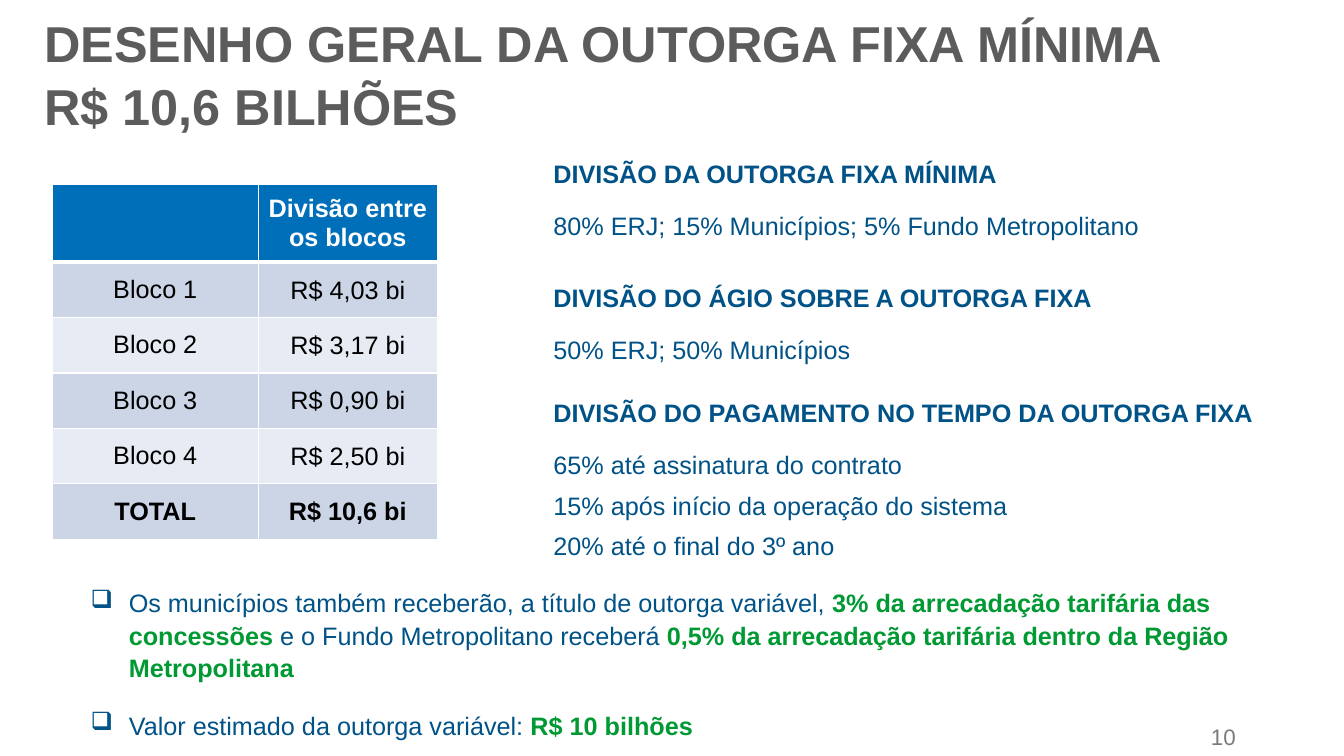
from dataclasses import dataclass

from lxml.etree import SubElement
from pptx import Presentation
from pptx.dml.color import RGBColor
from pptx.enum.text import MSO_ANCHOR as Anchor, PP_ALIGN as Align
from pptx.oxml.ns import qn
from pptx.util import Inches, Pt


@dataclass(frozen=True)
class Theme:
    font: str = "Arial"
    title: str = "5C5C5C"
    number: str = "7B7B7B"
    text: str = "005287"
    accent: str = "009933"
    header: str = "006FB9"
    bands: tuple = ("CCD5E6", "E7EBF3")
    white: str = "FFFFFF"
    black: str = "000000"
    title_size: int = 36
    body_size: int = 18
    number_size: int = 16
    line_spacing: float = 1.07


THEME = Theme()

BLOCKS = [
    ("", "Divisão entre os blocos"),
    ("Bloco 1", "R$ 4,03 bi"),
    ("Bloco 2", "R$ 3,17 bi"),
    ("Bloco 3", "R$ 0,90 bi"),
    ("Bloco 4", "R$ 2,50 bi"),
    ("TOTAL", "R$ 10,6 bi"),
]

DIVISIONS = [
    ((5.39, 1.5, 7.56, 0.95), "DIVISÃO DA OUTORGA FIXA MÍNIMA",
     ["80% ERJ; 15% Municípios; 5% Fundo Metropolitano"]),
    ((5.39, 2.73, 7.56, 0.95), "DIVISÃO DO ÁGIO SOBRE A OUTORGA FIXA",
     ["50% ERJ; 50% Municípios"]),
    ((5.39, 3.87, 7.56, 1.76), "DIVISÃO DO PAGAMENTO NO TEMPO DA OUTORGA FIXA",
     ["65% até assinatura do contrato",
      "15% após início da operação do sistema",
      "20% até o final do 3º ano"]),
]

VARIABLE_GRANT = [
    [("Os municípios também receberão, a título de outorga variável, ", False),
     ("3% da arrecadação tarifária das concessões ", True),
     ("e o Fundo Metropolitano receberá ", False),
     ("0,5% da arrecadação tarifária dentro da Região Metropolitana", True)],
    [("Valor estimado da outorga variável: ", False),
     ("R$ 10 bilhões", True)],
]


def style_font(font, size, color, bold=False):
    font.name = THEME.font
    font.size = Pt(size)
    font.bold = bold
    font.color.rgb = RGBColor.from_string(color)


def add_text_frame(page, box, inset=None):
    frame = page.shapes.add_textbox(*map(Inches, box)).text_frame
    frame.word_wrap = True
    if inset is not None:
        frame.margin_left = frame.margin_right = Inches(inset)
        frame.margin_top = frame.margin_bottom = Inches(inset)
    return frame


def add_title(page, box, lines):
    frame = add_text_frame(page, box, 0.06)
    frame.vertical_anchor = Anchor.MIDDLE
    frame.text = "\n".join(lines)
    for para in frame.paragraphs:
        para.space_after = Pt(2)
        style_font(para.runs[0].font, THEME.title_size, THEME.title, True)


def add_page_number(page, box, number):
    frame = add_text_frame(page, box, 0.05)
    frame.text = number
    style_font(frame.paragraphs[0].runs[0].font, THEME.number_size, THEME.number)


def add_borders(cell, widths):
    properties = cell._tc.get_or_add_tcPr()
    for side, width in widths.items():
        line = SubElement(properties, qn(f"a:ln{side}"), w=str(Pt(width)))
        fill = SubElement(line, qn("a:solidFill"))
        SubElement(fill, qn("a:srgbClr"), val=THEME.white)


def add_block_table(page, box, rows):
    left, top, width, height = box
    header_height = 0.77
    row_height = (height - header_height) / (len(rows) - 1)
    table = page.shapes.add_table(len(rows), 2, *map(Inches, box)).table
    label_width = 2.04
    table.columns[0].width = Inches(label_width)
    table.columns[1].width = Inches(width - label_width)
    for r, values in enumerate(rows):
        is_header = r == 0
        table.rows[r].height = Inches(header_height if is_header else row_height)
        for c, value in enumerate(values):
            cell = table.cell(r, c)
            add_borders(cell, {"L": 1, "R": 1, "T": 3 if r == 1 else 1,
                               "B": 3 if is_header else 1})
            cell.fill.solid()
            color = THEME.header if is_header else THEME.bands[(r - 1) % 2]
            cell.fill.fore_color.rgb = RGBColor.from_string(color)
            cell.vertical_anchor = Anchor.MIDDLE
            if c == 1 and not is_header:
                cell.margin_left = cell.margin_right = cell.margin_top = Inches(0.01)
                cell.margin_bottom = 0
            cell.text = value
            para = cell.text_frame.paragraphs[0]
            para.alignment = Align.CENTER
            font = para.runs[0].font if para.runs else para.font
            style_font(font, THEME.body_size, THEME.white if is_header else THEME.black,
                       is_header or r == len(rows) - 1)


def add_division(page, box, heading, details):
    frame = add_text_frame(page, box)
    frame.text = "\n".join([heading, *details])
    for index, para in enumerate(frame.paragraphs):
        para.line_spacing = THEME.line_spacing
        if index:
            para.space_before = Pt(6)
        else:
            para.space_after = Pt(8)
        style_font(para.runs[0].font, THEME.body_size, THEME.text, index == 0)


def add_bullets(page, box, items):
    frame = add_text_frame(page, box)
    for index, pieces in enumerate(items):
        para = frame.add_paragraph() if index else frame.paragraphs[0]
        para.line_spacing = THEME.line_spacing
        para.space_after = Pt(6)
        if index:
            para.space_before = Pt(12)
        properties = para._p.get_or_add_pPr()
        properties.set("marL", str(Inches(0.38)))
        properties.set("indent", str(-Inches(0.38)))
        SubElement(properties, qn("a:buChar"), char="❑")
        for text, highlighted in pieces:
            span = para.add_run()
            span.text = text
            color = THEME.accent if highlighted else THEME.text
            style_font(span.font, THEME.body_size, color, highlighted)


def main():
    deck = Presentation()
    deck.slide_width, deck.slide_height = Inches(13.33), Inches(7.5)
    page = deck.slides.add_slide(deck.slide_layouts[6])
    add_page_number(page, (11.96, 7.12, 1.38, 0.37), "10")
    add_title(page, (0.38, 0.06, 11.63, 1.35),
              ["DESENHO GERAL DA OUTORGA FIXA MÍNIMA", "R$ 10,6 BILHÕES"])
    add_block_table(page, (0.52, 1.83, 3.82, 3.52), BLOCKS)
    for box, heading, details in DIVISIONS:
        add_division(page, box, heading, details)
    add_bullets(page, (0.8, 5.76, 11.66, 1.65), VARIABLE_GRANT)
    deck.save("out.pptx")


if __name__ == "__main__":
    main()
